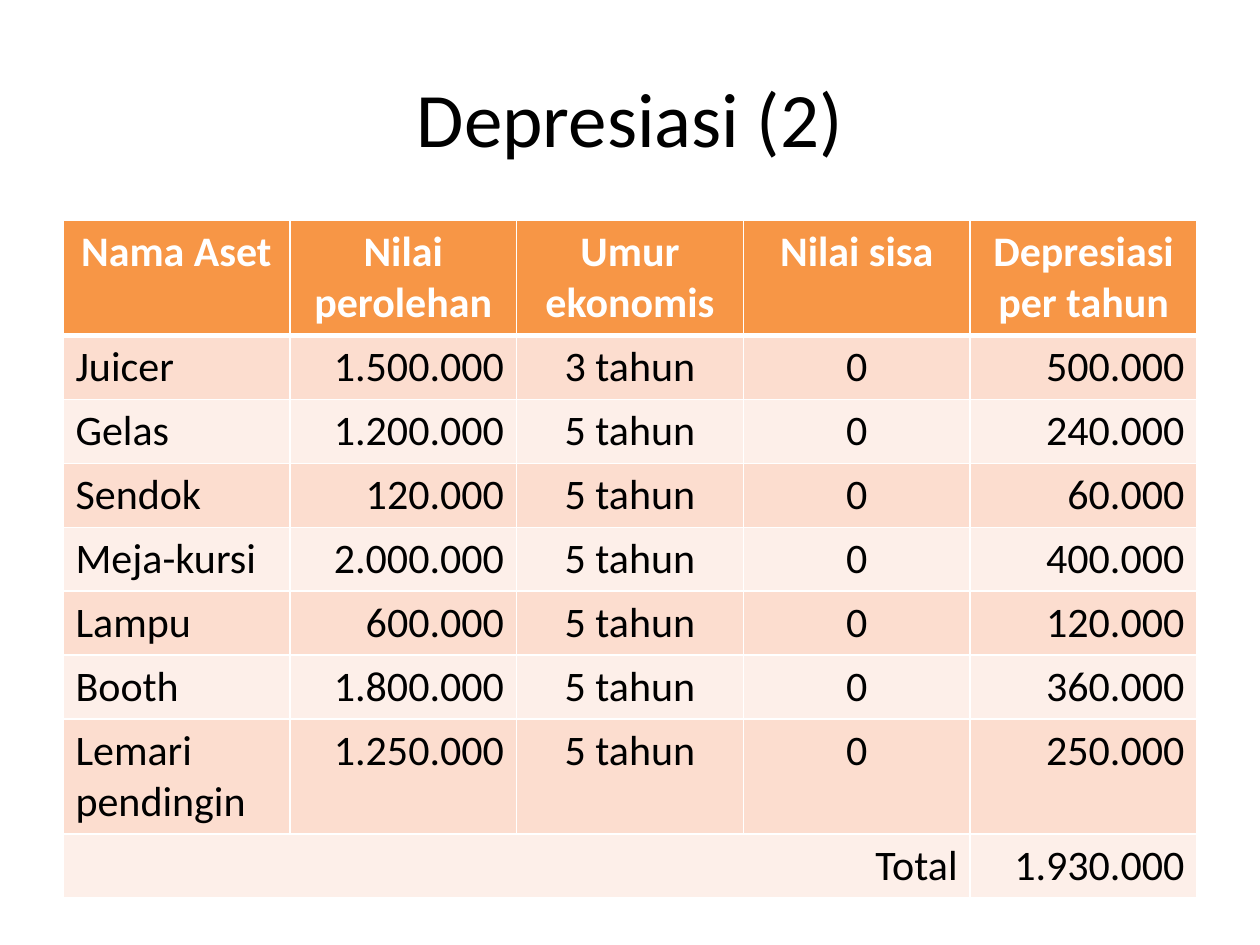
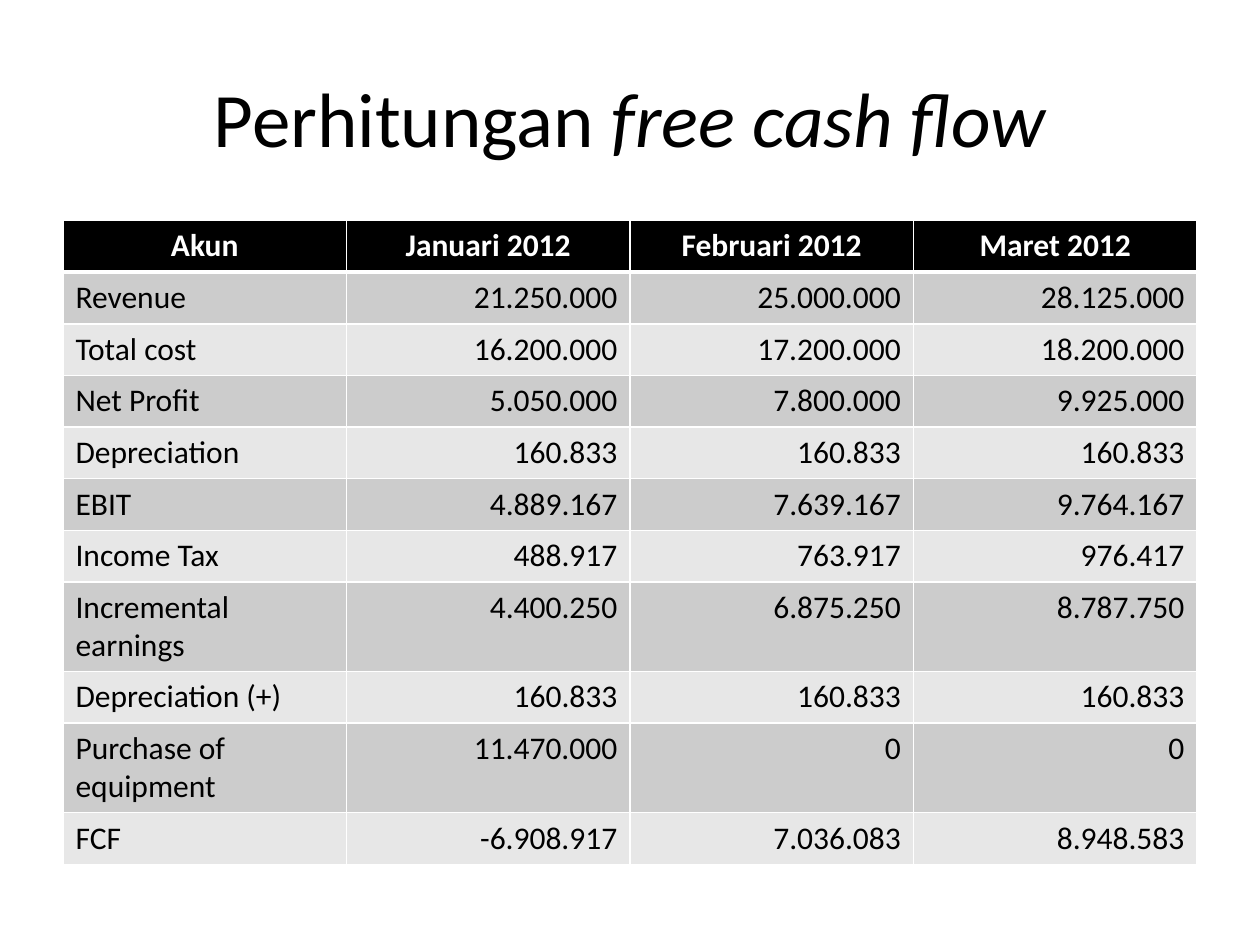
from lxml import etree
from pptx import Presentation
from pptx.dml.color import RGBColor
from pptx.enum.text import MSO_ANCHOR, PP_ALIGN
from pptx.oxml.ns import qn
from pptx.util import Inches, Pt

ALIGN = {"l": PP_ALIGN.LEFT, "c": PP_ALIGN.CENTER, "r": PP_ALIGN.RIGHT}
MIDDLE = MSO_ANCHOR.MIDDLE
FONT = "Calibri"
BLACK, WHITE = "000000", "FFFFFF"
# Header fill, then the fills of odd and even body rows
ORANGE = ("F79646", "FCDDCF", "FDEFE9")
GREY = (BLACK, "CCCCCC", "E7E7E7")
LEFT, WIDTH = 0.5, 9
ROW = 0.41

ASSETS = [
    ("Nama Aset", "Nilai perolehan", "Umur ekonomis", "Nilai sisa",
     "Depresiasi per tahun"),
    ("Juicer", "1.500.000", "3 tahun", "0", "500.000"),
    ("Gelas", "1.200.000", "5 tahun", "0", "240.000"),
    ("Sendok", "120.000", "5 tahun", "0", "60.000"),
    ("Meja-kursi", "2.000.000", "5 tahun", "0", "400.000"),
    ("Lampu", "600.000", "5 tahun", "0", "120.000"),
    ("Booth", "1.800.000", "5 tahun", "0", "360.000"),
    ("Lemari pendingin", "1.250.000", "5 tahun", "0", "250.000"),
    ("Total", "", "", "", "1.930.000"),
]
FLOWS = [
    ("Akun", "Januari 2012", "Februari 2012", "Maret 2012"),
    ("Revenue", "21.250.000", "25.000.000", "28.125.000"),
    ("Total cost", "16.200.000", "17.200.000", "18.200.000"),
    ("Net Profit", "5.050.000", "7.800.000", "9.925.000"),
    ("Depreciation", "160.833", "160.833", "160.833"),
    ("EBIT", "4.889.167", "7.639.167", "9.764.167"),
    ("Income Tax", "488.917", "763.917", "976.417"),
    ("Incremental earnings", "4.400.250", "6.875.250", "8.787.750"),
    ("Depreciation (+)", "160.833", "160.833", "160.833"),
    ("Purchase of equipment", "11.470.000", "0", "0"),
    ("FCF", "-6.908.917", "7.036.083", "8.948.583"),
]


def rgb(code):
    return RGBColor.from_string(code)


def style(font, size, color, bold=False):
    font.name = FONT
    font.size = Pt(size)
    font.color.rgb = rgb(color)
    font.bold = bold


def add_slide(deck, title, slant=""):
    """Add a titled slide; slant is the italic end of the title."""
    slide = deck.slides.add_slide(deck.slide_layouts[5])
    box = slide.shapes.title
    box.left, box.top = Inches(LEFT), Inches(0.3)
    box.width, box.height = Inches(WIDTH), Inches(1.25)
    frame = box.text_frame
    frame.vertical_anchor = MIDDLE
    frame.text = title
    para = frame.paragraphs[0]
    para.alignment = ALIGN["c"]
    if slant:
        run = para.add_run()
        run.text = slant
        run.font.italic = True
    for run in para.runs:
        style(run.font, 44, BLACK)
    return slide


def add_edges(cell, row):
    """Draw white cell borders, thick between header and body."""
    props = cell._tc.get_or_add_tcPr()
    for side in "LRTB":
        thick = (row, side) in ((0, "B"), (1, "T"))
        line = etree.SubElement(props, qn(f"a:ln{side}"),
                                w=str(Pt(3 if thick else 1)))
        fill = etree.SubElement(line, qn("a:solidFill"))
        etree.SubElement(fill, qn("a:srgbClr"), val=WHITE)


def fill_cell(cell, text, row, size, fills, align):
    head = row == 0
    add_edges(cell, row)
    cell.fill.solid()
    cell.fill.fore_color.rgb = rgb(fills[0 if head else 2 - row % 2])
    cell.text = text
    para = cell.text_frame.paragraphs[0]
    para.alignment = ALIGN["c" if head else align]
    for run in para.runs:
        style(run.font, size, WHITE if head else BLACK, head)


def add_grid(slide, data, size, fills, aligns):
    """Add a table; aligns holds one letter for each column."""
    count = len(data[0])
    grid = slide.shapes.add_table(
        len(data), count, Inches(LEFT), Inches(1.75),
        Inches(WIDTH), Inches(ROW * len(data))).table
    for col in grid.columns:
        col.width = Inches(WIDTH / count)
    for r, texts in enumerate(data):
        grid.rows[r].height = Inches(ROW)
        for c, text in enumerate(texts):
            fill_cell(grid.cell(r, c), text, r, size, fills, aligns[c])
    return grid


def main():
    deck = Presentation()
    deck.slide_width, deck.slide_height = Inches(10), Inches(7.5)

    slide = add_slide(deck, "Depresiasi (2)")
    grid = add_grid(slide, ASSETS, 24, ORANGE, "lrccr")
    last = len(ASSETS) - 1
    total = grid.cell(last, 0)
    total.merge(grid.cell(last, 3))
    total.text_frame.paragraphs[0].alignment = ALIGN["r"]

    slide = add_slide(deck, "Perhitungan ", "free cash flow")
    add_grid(slide, FLOWS, 18, GREY, "lrrr")

    deck.save("out.pptx")


if __name__ == "__main__":
    main()
